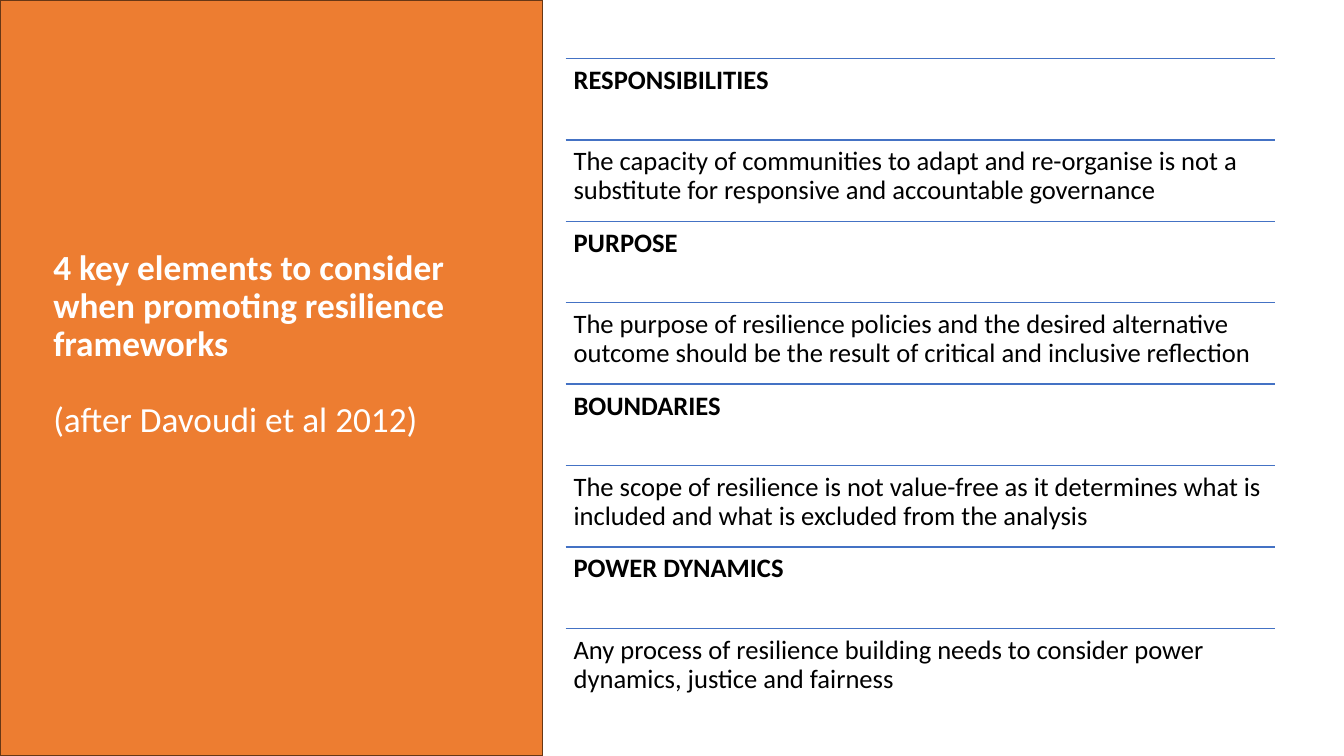
from lxml import etree
from pptx import Presentation
from pptx import util as u
from pptx.dml import color
from pptx.enum import shapes, text
from pptx.oxml import ns

ITEMS = [
    ("RESPONSIBILITIES",
     "The capacity of communities to adapt and re-organise is not a "
     "substitute for responsive and accountable governance"),
    ("PURPOSE",
     "The purpose of resilience policies and the desired alternative "
     "outcome should be the result of critical and inclusive reflection"),
    ("BOUNDARIES",
     "The scope of resilience is not value-free as it determines what is "
     "included and what is excluded from the analysis"),
    ("POWER DYNAMICS",
     "Any process of resilience building needs to consider power "
     "dynamics, justice and fairness"),
]


class Deck:
    font = "Calibri"
    colors = {"panel": "ED7D31", "edge": "683715", "rule": "4472C4",
              "body": "000000", "title": "FFFFFF"}

    def __init__(self, slide):
        self.slide = slide

    def color(self, name):
        return color.RGBColor.from_string(self.colors[name])

    def panel(self, left, top, width, height):
        box = self.slide.shapes.add_shape(
            shapes.MSO_SHAPE.RECTANGLE, *map(u.Inches, (left, top, width, height)))
        box.shadow.inherit = False
        box.fill.solid()
        box.fill.fore_color.rgb = self.color("panel")
        box.line.color.rgb = self.color("edge")
        box.line.width = u.Pt(1)

    def rule(self, left, top, width):
        line = self.slide.shapes.add_connector(
            shapes.MSO_CONNECTOR.STRAIGHT,
            *map(u.Inches, (left, top, left + width, top)))
        line.line.color.rgb = self.color("rule")
        line.line.width = u.Pt(1)
        etree.SubElement(line._element.spPr, ns.qn("a:effectLst"))

    def text(self, area, paras, size, name, inset, anchor, gap=0):
        box = self.slide.shapes.add_textbox(*map(u.Inches, area))
        frame = box.text_frame
        frame.word_wrap = True
        frame.vertical_anchor = anchor
        frame.margin_left = frame.margin_right = u.Inches(inset[0])
        frame.margin_top = frame.margin_bottom = u.Inches(inset[1])
        for i, (words, bold) in enumerate(paras):
            para = frame.add_paragraph() if i else frame.paragraphs[0]
            para.text = words
            para.line_spacing = 0.9
            if i:
                para.space_before = u.Pt(gap)
            for run in para.runs:
                run.font.name = self.font
                run.font.size = u.Pt(size)
                run.font.bold = bold
                run.font.color.rgb = self.color(name)


def main():
    prs = Presentation()
    prs.slide_width, prs.slide_height = u.Inches(13.33), u.Inches(7.5)
    deck = Deck(prs.slides.add_slide(prs.slide_layouts[6]))

    left, top, width = 5.61, 0.58, 7.04
    rows = [(words, i == 0) for item in ITEMS for i, words in enumerate(item)]
    step = 6.46 / len(rows)
    for i, row in enumerate(rows):
        y = top + i * step
        deck.rule(left, y, width)
        deck.text((left, y, width, step), [row], 19, "body", (0.08, 0.08),
                  text.MSO_ANCHOR.TOP)

    deck.panel(0, 0, 5.38, 7.5)
    deck.text((0.43, 2.28, 4.32, 2.29),
              [("4 key elements to consider when promoting resilience frameworks", True),
               ("(after Davoudi et al 2012)", False)],
              25.2, "title", (0.1, 0.05), text.MSO_ANCHOR.MIDDLE, gap=27)
    prs.save("out.pptx")


if __name__ == "__main__":
    main()
